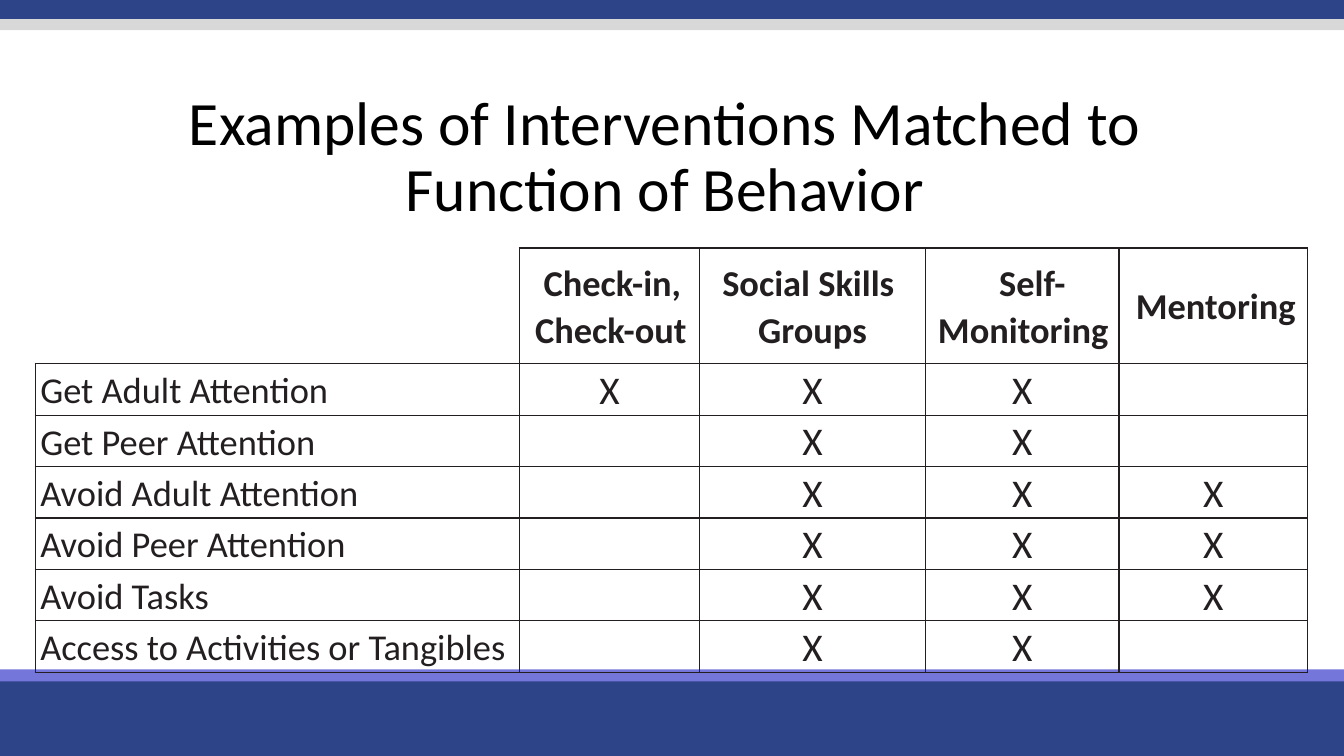
from lxml import etree
from pptx import Presentation
from pptx.dml.color import RGBColor as RGB
from pptx.enum.shapes import MSO_SHAPE as SHAPE
from pptx.enum.text import MSO_ANCHOR as ANCHOR, PP_ALIGN as ALIGN
from pptx.oxml.ns import qn
from pptx.util import Inches, Pt

COLORS = {"navy": "2E4488", "violet": "7476DA", "gray": "D8D8D8",
          "ink": "231F20", "black": "000000"}
FONT = "Calibri"
WIDTH, HEIGHT = 13.33, 7.5


def add_run(p, text, size, color, bold=False):
    r = p.add_run()
    r.text = text
    r.font.name, r.font.size, r.font.bold = FONT, Pt(size), bold
    r.font.color.rgb = RGB.from_string(COLORS[color])


def set_borders(cell, visible):
    """Draw the sides named in visible (of L, R, T, B) and hide the others."""
    tc_pr = cell._tc.get_or_add_tcPr()
    for side in "LRTB":
        ln = etree.SubElement(tc_pr, qn(f"a:ln{side}"), w=str(Pt(1)))
        if side in visible:
            fill = etree.SubElement(ln, qn("a:solidFill"))
            etree.SubElement(fill, qn("a:srgbClr"), val=COLORS["ink"])
        else:
            etree.SubElement(ln, qn("a:noFill"))


prs = Presentation()
prs.slide_width, prs.slide_height = Inches(WIDTH), Inches(HEIGHT)
slide = prs.slides.add_slide(prs.slide_layouts[6])

# Bands across the top and bottom
for top, height, color in [(6.7, 0.8, "navy"), (6.64, 0.12, "violet"),
                           (0, 0.19, "navy"), (0.19, 0.11, "gray")]:
    sp = slide.shapes.add_shape(SHAPE.RECTANGLE, 0, Inches(top),
                                prs.slide_width, Inches(height))
    sp.shadow.inherit = False
    sp.fill.solid()
    sp.fill.fore_color.rgb = RGB.from_string(COLORS[color])
    sp.line.fill.background()

# Intervention table
col_widths = [4.8, 1.79, 2.24, 1.92, 1.87]
row_heights = [1.15] + [0.51] * 6
# Lines of each heading, then its left margin and first-line indent
headings = [(["Check-in, Check-out"], 0.03, 0.03),
            (["Social Skills ", "Groups"], 0, 0),
            (["Self- Monitoring"], 0.02, 0.18),
            (["Mentoring"], 0.05, 0)]
functions = [("Get Adult Attention", "XXX "),
             ("Get Peer Attention", " XX "),
             ("Avoid Adult Attention", " XXX"),
             ("Avoid Peer Attention", " XXX"),
             ("Avoid Tasks", " XXX"),
             ("Access to Activities or Tangibles", " XX ")]

table = slide.shapes.add_table(
    len(row_heights), len(col_widths), Inches(0.35), Inches(2.46),
    Inches(sum(col_widths)), Inches(sum(row_heights))).table
table.first_row = table.horz_banding = False
for column, width in zip(table.columns, col_widths):
    column.width = Inches(width)
for row, height in zip(table.rows, row_heights):
    row.height = Inches(height)

for i, row in enumerate(table.rows):
    for j, cell in enumerate(row.cells):
        set_borders(cell, "RB" if i == j == 0 else "LRTB")
        cell.fill.background()
        cell.vertical_anchor = ANCHOR.MIDDLE
        cell.margin_left = cell.margin_right = 0
        cell.margin_top = cell.margin_bottom = 0

        lines, left, indent, size = [], 0, 0, 26
        if i == 0 and j > 0:
            lines, left, indent = headings[j - 1]
        elif i > 0 and j == 0:
            lines, left = [functions[i - 1][0]], 0.05
        elif i > 0 and functions[i - 1][1][j - 1] == "X":
            lines, size = ["X"], 28

        tf = cell.text_frame
        for n, line in enumerate(lines):
            p = tf.add_paragraph() if n else tf.paragraphs[0]
            p.alignment = ALIGN.CENTER if j else ALIGN.LEFT
            p.line_spacing = 1.07
            p_pr = p._p.get_or_add_pPr()
            p_pr.set("marL", str(Inches(left)))
            p_pr.set("indent", str(Inches(indent)))
            add_run(p, line, size, "ink", bold=i == 0)

# Title
title = slide.shapes.add_textbox(0, Inches(0.69), prs.slide_width, Inches(1.77))
tf = title.text_frame
tf.word_wrap = True
tf.vertical_anchor = ANCHOR.MIDDLE
p = tf.paragraphs[0]
p.alignment = ALIGN.CENTER
p.line_spacing = 0.9
add_run(p, "Examples of Interventions Matched to ", 44, "black")
p.add_line_break()
add_run(p, "Function of Behavior ", 44, "black")

prs.save("out.pptx")
